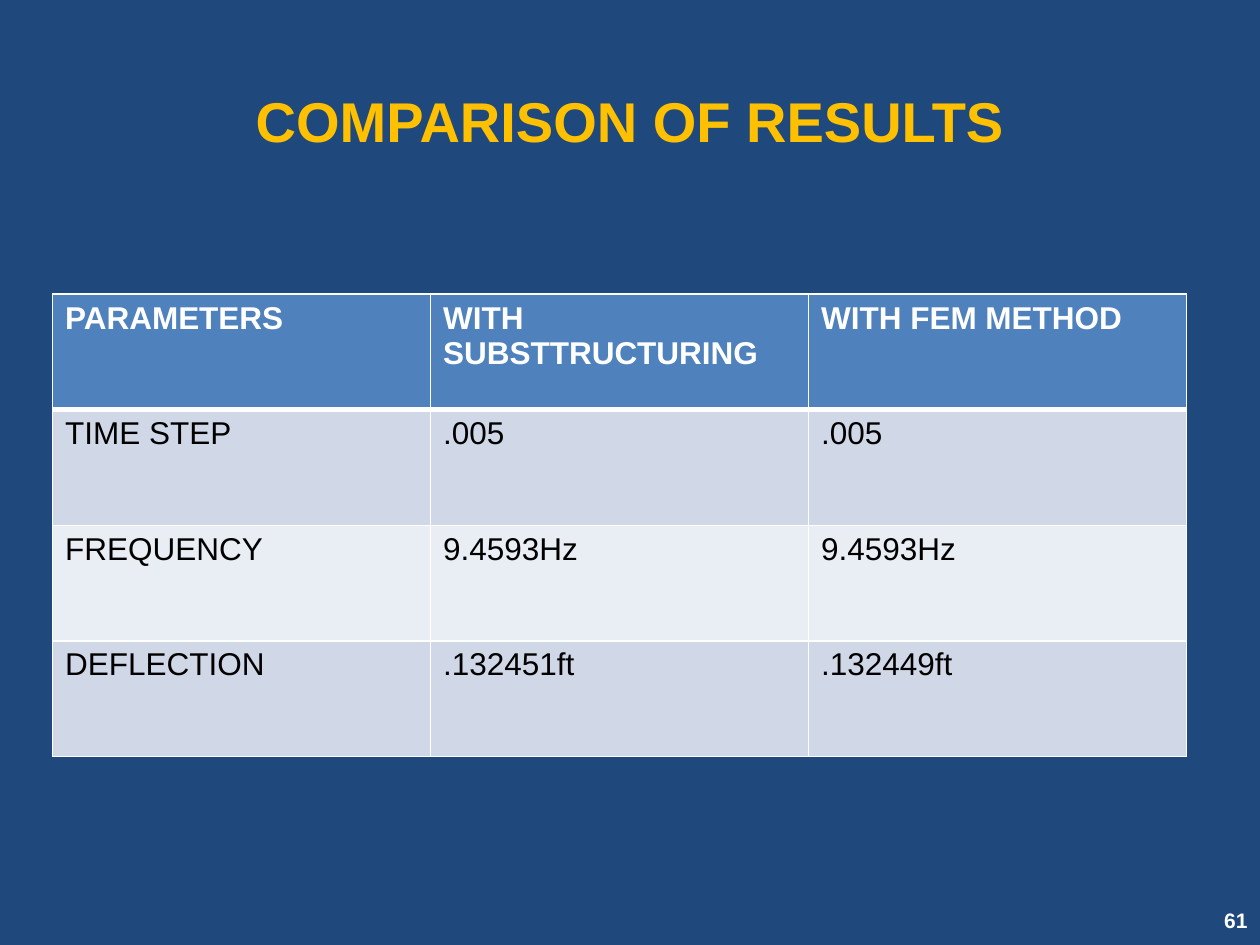
import dataclasses

import lxml.etree
import pptx
import pptx.dml.color
import pptx.enum.text
import pptx.oxml.ns
import pptx.slide
import pptx.table
import pptx.text.text
import pptx.util
from pptx.util import Cm

ALIGN = pptx.enum.text.PP_ALIGN


@dataclasses.dataclass(frozen=True)
class Theme:
    font: str = "Arial"
    background: str = "1F497D"
    accent: str = "FFC000"
    white: str = "FFFFFF"
    black: str = "000000"
    header: str = "4F81BD"
    bands: tuple[str, str] = ("D0D8E8", "E9EDF4")
    title_size: int = 32
    table_size: int = 18
    number_size: int = 12
    rule: int = 1
    header_rule: int = 3


@dataclasses.dataclass(frozen=True)
class Label:
    text: str
    left: float
    top: float
    width: float
    height: float
    size: int
    color: str
    align: ALIGN


@dataclasses.dataclass(frozen=True)
class Result:
    parameter: str
    substructuring: str
    fem: str


THEME = Theme()

LABELS = (
    Label("COMPARISON OF RESULTS", 1.27, 0.84, 22.86, 3.18,
          THEME.title_size, THEME.accent, ALIGN.CENTER),
    Label("61", 23.7, 18.03, 1.7, 1.02,
          THEME.number_size, THEME.white, ALIGN.RIGHT),
)

RESULTS = (
    Result("PARAMETERS", "WITH SUBSTTRUCTURING", "WITH FEM METHOD"),
    Result("TIME STEP", ".005", ".005"),
    Result("FREQUENCY", "9.4593Hz", "9.4593Hz"),
    Result("DEFLECTION", ".132451ft", ".132449ft"),
)


def rgb(color: str) -> pptx.dml.color.RGBColor:
    return pptx.dml.color.RGBColor.from_string(color)


def write(frame: pptx.text.text.TextFrame, text: str, size: int, color: str,
          bold: bool, align: ALIGN) -> None:
    paragraph = frame.paragraphs[0]
    paragraph.alignment = align
    run = paragraph.add_run()
    run.text = text
    run.font.name = THEME.font
    run.font.size = pptx.util.Pt(size)
    run.font.bold = bold
    run.font.color.rgb = rgb(color)


def add_label(slide: pptx.slide.Slide, label: Label) -> None:
    box = slide.shapes.add_textbox(
        Cm(label.left), Cm(label.top), Cm(label.width), Cm(label.height))
    box.text_frame.word_wrap = True
    box.text_frame.vertical_anchor = pptx.enum.text.MSO_ANCHOR.MIDDLE
    write(box.text_frame, label.text, label.size, label.color, True, label.align)


def add_borders(cell: pptx.table._Cell, widths: dict[str, int]) -> None:
    qn = pptx.oxml.ns.qn
    properties = cell._tc.get_or_add_tcPr()
    for side, width in widths.items():
        line = lxml.etree.SubElement(
            properties, qn(f"a:ln{side}"), w=str(int(pptx.util.Pt(width))))
        fill = lxml.etree.SubElement(line, qn("a:solidFill"))
        lxml.etree.SubElement(fill, qn("a:srgbClr"), val=THEME.white)


def add_results(slide: pptx.slide.Slide, results: tuple[Result, ...]) -> None:
    column_count = len(dataclasses.fields(Result))
    table = slide.shapes.add_table(
        len(results), column_count,
        Cm(1.06), Cm(5.93), Cm(22.86), Cm(9.32)).table
    for row, result in enumerate(results):
        is_header = row == 0
        fill = THEME.header if is_header else THEME.bands[(row - 1) % 2]
        color = THEME.white if is_header else THEME.black
        borders = {
            "L": THEME.rule,
            "R": THEME.rule,
            "T": THEME.header_rule if row == 1 else THEME.rule,
            "B": THEME.header_rule if is_header else THEME.rule,
        }
        for column, value in enumerate(dataclasses.astuple(result)):
            cell = table.cell(row, column)
            add_borders(cell, borders)
            cell.fill.solid()
            cell.fill.fore_color.rgb = rgb(fill)
            write(cell.text_frame, value, THEME.table_size, color,
                  is_header, ALIGN.LEFT)


def main() -> None:
    presentation = pptx.Presentation()
    presentation.slide_width = Cm(25.4)
    presentation.slide_height = Cm(19.05)
    slide = presentation.slides.add_slide(presentation.slide_layouts[6])
    slide.background.fill.solid()
    slide.background.fill.fore_color.rgb = rgb(THEME.background)
    add_results(slide, RESULTS)
    for label in LABELS:
        add_label(slide, label)
    presentation.save("out.pptx")


if __name__ == "__main__":
    main()
